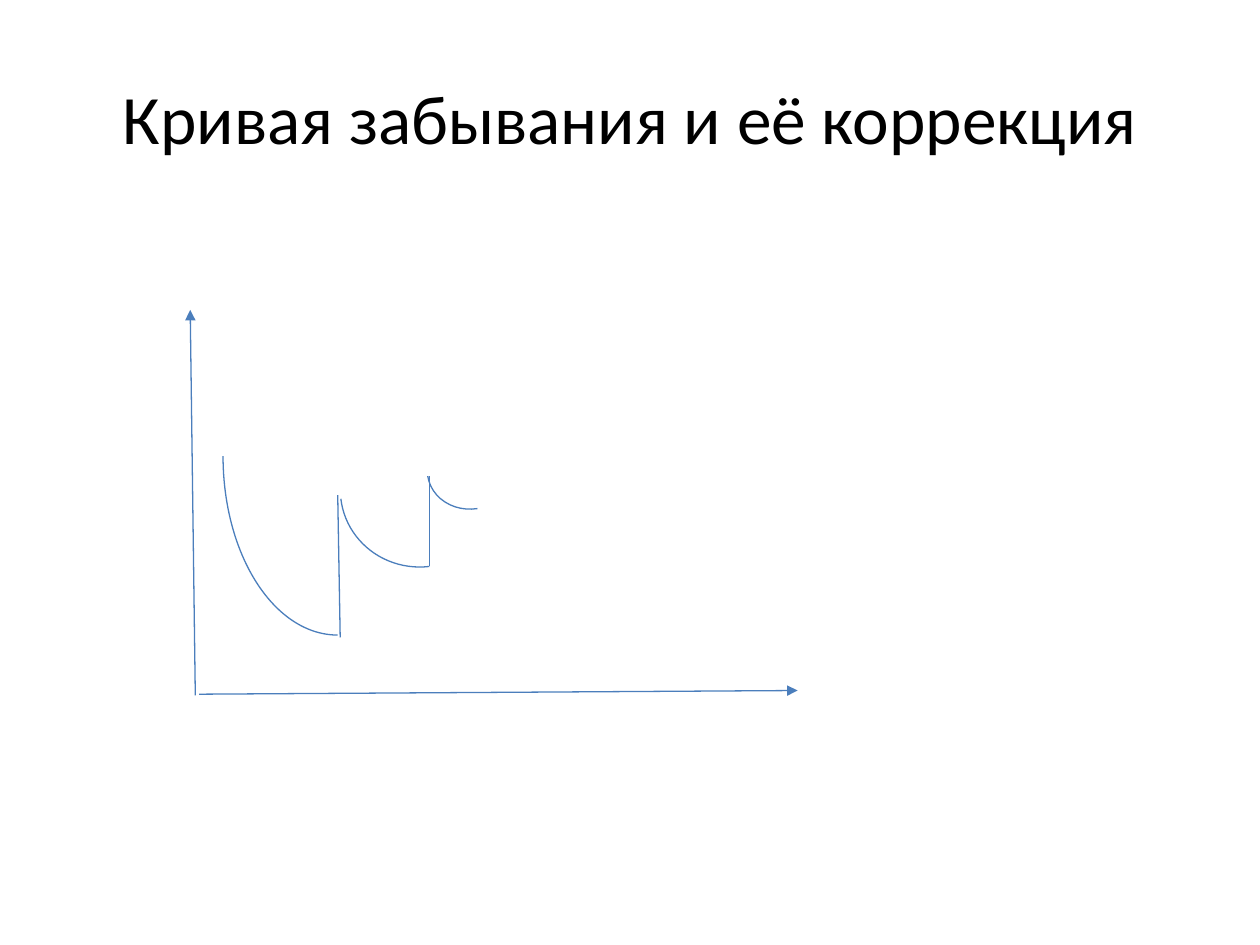
from typing import NamedTuple

from lxml.etree import SubElement
from pptx import Presentation
from pptx.dml.color import RGBColor
from pptx.dml.line import LineFormat
from pptx.enum.shapes import MSO_CONNECTOR, MSO_SHAPE
from pptx.enum.text import MSO_ANCHOR, PP_ALIGN
from pptx.oxml.ns import qn
from pptx.slide import Slide
from pptx.util import Pt

COLORS = {"background": "FFFFFF", "title": "000000", "curve": "4B7EBC"}


class Segment(NamedTuple):
    x1: float
    y1: float
    x2: float
    y2: float
    arrow: bool = False


class Decay(NamedTuple):
    left: float
    top: float
    width: float
    height: float
    rotation: float


AXES = [
    Segment(111.6, 397.4, 108.7, 177.1, arrow=True),
    Segment(113.8, 396.7, 455.8, 394.6, arrow=True),
]
# Each review lifts memory back up between two stretches of forgetting
REVIEWS = [
    Segment(194.4, 364.3, 193, 283),
    Segment(245.5, 323.3, 245.5, 272.2),
]
DECAYS = [
    Decay(127.4, 158.4, 131, 204.5, 180),
    Decay(194.4, 235.4, 91.4, 88.6, 173.3),
    Decay(244.1, 245.5, 50.4, 45.4, 171.1),
]


def style_line(line: LineFormat) -> None:
    line.color.rgb = RGBColor.from_string(COLORS["curve"])
    line.width = Pt(0.75)


def draw_segment(slide: Slide, segment: Segment) -> None:
    connector = slide.shapes.add_connector(
        MSO_CONNECTOR.STRAIGHT,
        Pt(segment.x1), Pt(segment.y1), Pt(segment.x2), Pt(segment.y2),
    )
    style_line(connector.line)
    properties = connector._element.spPr
    if segment.arrow:
        SubElement(properties.find(qn("a:ln")), qn("a:tailEnd"), type="triangle")
    SubElement(properties, qn("a:effectLst"))


def draw_decay(slide: Slide, decay: Decay) -> None:
    arc = slide.shapes.add_shape(
        MSO_SHAPE.ARC,
        Pt(decay.left), Pt(decay.top), Pt(decay.width), Pt(decay.height),
    )
    arc.rotation = decay.rotation
    arc.fill.background()
    style_line(arc.line)
    arc.shadow.inherit = False


def draw_title(slide: Slide, wording: str) -> None:
    frame = slide.shapes.add_textbox(Pt(36), Pt(21.6), Pt(648), Pt(90)).text_frame
    frame.word_wrap = True
    frame.vertical_anchor = MSO_ANCHOR.MIDDLE
    heading = frame.paragraphs[0]
    heading.text = wording
    heading.alignment = PP_ALIGN.CENTER
    heading.font.name = "Calibri"
    heading.font.size = Pt(39.6)
    heading.font.color.rgb = RGBColor.from_string(COLORS["title"])


def main() -> None:
    presentation = Presentation()
    presentation.slide_width, presentation.slide_height = Pt(720), Pt(540)
    slide = presentation.slides.add_slide(presentation.slide_layouts[6])
    background = slide.background.fill
    background.solid()
    background.fore_color.rgb = RGBColor.from_string(COLORS["background"])

    draw_title(slide, "Кривая забывания и её коррекция")

    # Axes, then the forgetting curve with its corrections
    for segment in AXES + REVIEWS:
        draw_segment(slide, segment)
    for decay in DECAYS:
        draw_decay(slide, decay)

    presentation.save("out.pptx")


if __name__ == "__main__":
    main()
